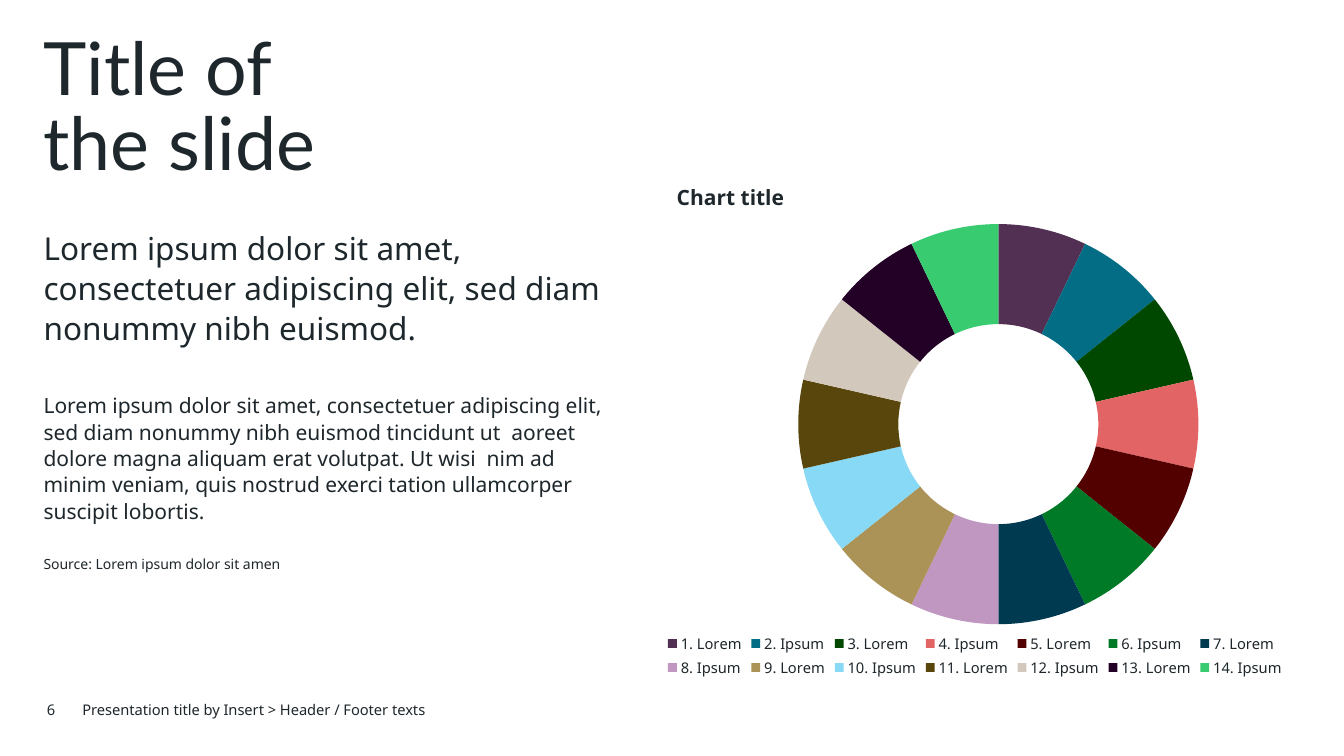
from lxml.etree import SubElement
from pptx import Presentation
from pptx.chart.data import CategoryChartData
from pptx.dml.color import RGBColor
from pptx.enum.chart import XL_CHART_TYPE, XL_LEGEND_POSITION
from pptx.enum.text import MSO_ANCHOR, PP_ALIGN
from pptx.oxml import parse_xml
from pptx.oxml.ns import nsdecls, qn
from pptx.util import Pt

PX = 9525
BODY_FONT = "Noto Sans"
TITLE_FONT = "Lato"
COLORS = {"ink": "1E272C", "paper": "FFFFFF"}
SLICES = {
    "1. Lorem": "523054",
    "2. Ipsum": "046D86",
    "3. Lorem": "004700",
    "4. Ipsum": "E26465",
    "5. Lorem": "520000",
    "6. Ipsum": "007A26",
    "7. Lorem": "003A51",
    "8. Ipsum": "BF97C1",
    "9. Lorem": "AB9256",
    "10. Ipsum": "87D9F5",
    "11. Lorem": "58460D",
    "12. Ipsum": "D3C8BC",
    "13. Lorem": "230025",
    "14. Ipsum": "38CB70",
}


def emu(box):
    return [length * PX for length in box]


def set_font(font, size, name=BODY_FONT, bold=False):
    font.size = Pt(size)
    font.name = name
    font.bold = bold
    font.color.rgb = RGBColor.from_string(COLORS["ink"])


def add_text(page, box, anchor=MSO_ANCHOR.TOP):
    """Add a wrapping text box and return its text frame."""
    frame = page.shapes.add_textbox(*emu(box)).text_frame
    frame.word_wrap = True
    frame.vertical_anchor = anchor
    return frame


def add_title(page, box):
    para = add_text(page, box).paragraphs[0]
    para.text = "Title of\vthe slide"
    para.line_spacing = 0.85
    set_font(para.font, 52.5, TITLE_FONT)


def add_body(page, box):
    blocks = [
        ("Lorem ipsum dolor sit amet, consectetuer adipiscing elit, "
         "sed diam nonummy nibh euismod.", 22.5, 0),
        ("Lorem ipsum dolor sit amet, consectetuer adipiscing elit, "
         "sed diam nonummy nibh euismod tincidunt ut  aoreet dolore magna "
         "aliquam erat volutpat. Ut wisi  nim ad minim veniam, quis nostrud "
         "exerci tation ullamcorper suscipit lobortis.", 15, 32),
        ("Source: Lorem ipsum dolor sit amen", 10, 22),
    ]
    frame = add_text(page, box)
    for index, (text, size, gap) in enumerate(blocks):
        para = frame.add_paragraph() if index else frame.paragraphs[0]
        para.text = text
        para.line_spacing = 1.05
        para.space_before = Pt(gap)
        set_font(para.font, size)


def add_footer(page, box):
    left, top, width, height = box
    number_width = 62
    text_left = 69
    parts = [
        ("6", left, number_width, PP_ALIGN.RIGHT),
        ("Presentation title by Insert > Header / Footer texts",
         left + text_left, width - text_left, PP_ALIGN.LEFT),
    ]
    for text, part_left, part_width, align in parts:
        part_box = (part_left, top, part_width, height)
        para = add_text(page, part_box, MSO_ANCHOR.MIDDLE).paragraphs[0]
        para.text = text
        para.alignment = align
        set_font(para.font, 10.5)


def set_layout(parent, index, **settings):
    """Give a chart part a manual layout, as shares of the chart area."""
    for old in parent.findall(qn("c:layout")):
        parent.remove(old)
    layout = parse_xml(f"<c:layout {nsdecls('c')}><c:manualLayout/></c:layout>")
    for tag, value in settings.items():
        SubElement(layout[0], qn(f"c:{tag}")).set("val", str(value))
    parent.insert(index, layout)


def add_doughnut(page, box):
    data = CategoryChartData()
    data.categories = list(SLICES)
    data.add_series("Series 1", [7] * len(SLICES))
    chart = page.shapes.add_chart(XL_CHART_TYPE.DOUGHNUT, *emu(box), data).chart
    set_font(chart.font, 10)

    chart.has_title = True
    title = chart.chart_title
    title.include_in_layout = False
    para = title.text_frame.paragraphs[0]
    para.text = "Chart title"
    set_font(para.font, 15, bold=True)
    set_layout(title.element, 1, xMode="edge", yMode="edge", x=0.05, y=0.03)

    chart.has_legend = True
    chart.legend.position = XL_LEGEND_POSITION.BOTTOM
    chart.legend.include_in_layout = False
    set_font(chart.legend.font, 10.5)

    plot = chart.plots[0]
    plot.vary_by_categories = True
    plot.has_data_labels = False
    for index, color in enumerate(SLICES.values()):
        slice_format = plot.series[0].points[index].format
        slice_format.fill.solid()
        slice_format.fill.fore_color.rgb = RGBColor.from_string(color)
        slice_format.line.fill.background()

    plot_area = chart.element.find(f"{qn('c:chart')}/{qn('c:plotArea')}")
    set_layout(plot_area, 0, layoutTarget="inner", xMode="edge", yMode="edge",
               x=0.07, y=0.12, w=0.93, h=0.77)
    hole = plot_area.find(f"{qn('c:doughnutChart')}/{qn('c:holeSize')}")
    hole.set("val", "75")


def main():
    deck = Presentation()
    deck.slide_width, deck.slide_height = emu((1280, 720))
    page = deck.slides.add_slide(deck.slide_layouts[6])
    page.background.fill.solid()
    page.background.fill.fore_color.rgb = RGBColor.from_string(COLORS["paper"])
    add_title(page, (32, 29, 1217, 147))
    add_body(page, (32, 212, 560, 436))
    add_doughnut(page, (609, 154, 639, 495))
    add_footer(page, (0, 657, 1116, 38))
    deck.save("out.pptx")


if __name__ == "__main__":
    main()
